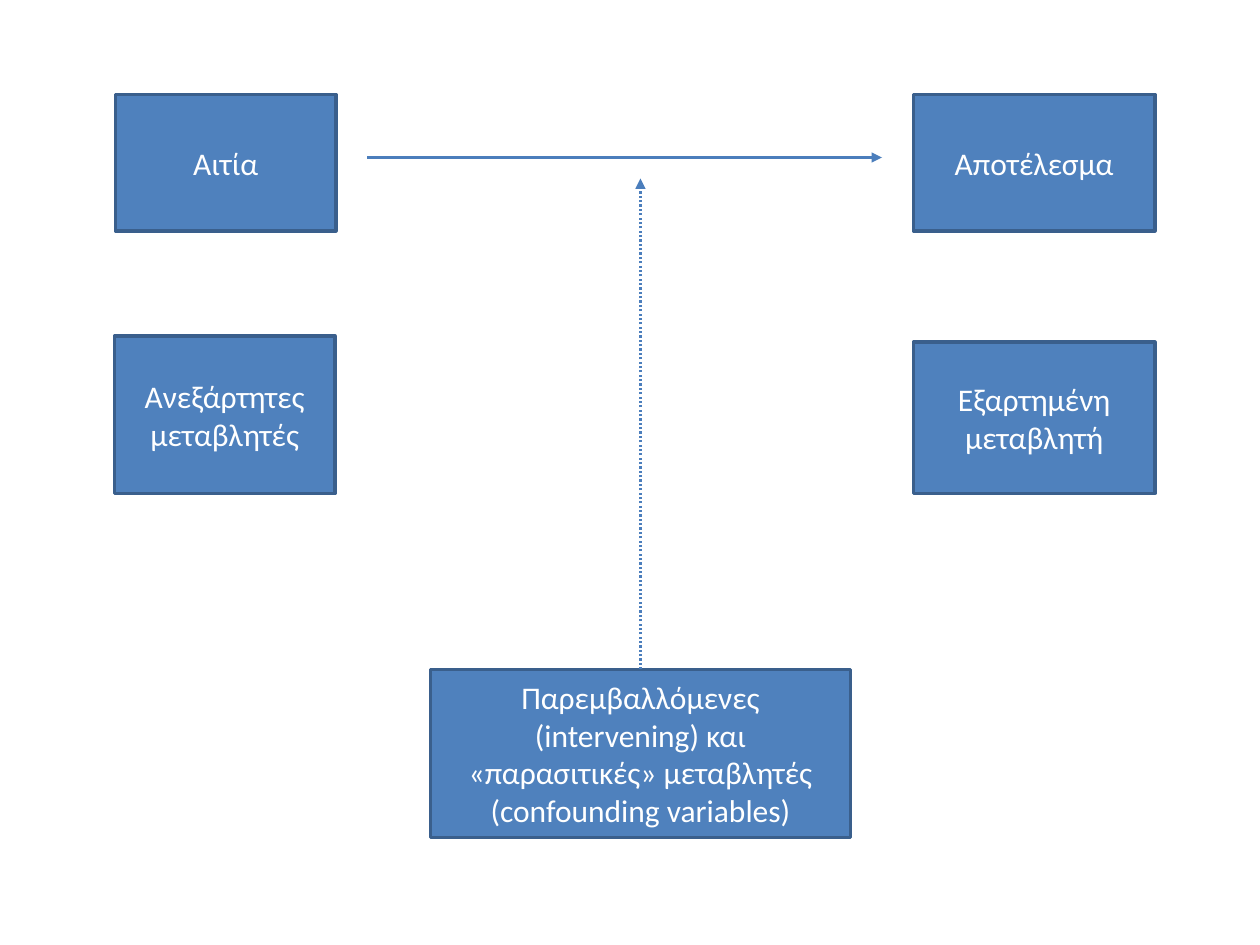
from lxml.etree import SubElement
from pptx import Presentation
from pptx.dml.color import RGBColor
from pptx.enum.dml import MSO_LINE
from pptx.enum.shapes import MSO_CONNECTOR as CONN, MSO_SHAPE as SHAPE
from pptx.enum.text import MSO_ANCHOR as ANCHOR, PP_ALIGN as ALIGN
from pptx.oxml.ns import qn
from pptx.util import Inches, Pt

BLUE = RGBColor(0x4F, 0x81, 0xBD)
BORDER = RGBColor(0x3A, 0x5F, 0x8C)
ARROW = RGBColor(0x4B, 0x7E, 0xBC)
WHITE = RGBColor(0xFF, 0xFF, 0xFF)
UNIT = Inches(1) / 12
COLS, ROWS = 120, 90


def grid(*cells):
    return [round(c * UNIT) for c in cells]


def add_box(s, text, col, row, cols, rows):
    sp = s.shapes.add_shape(SHAPE.RECTANGLE, *grid(col, row, cols, rows))
    sp.shadow.inherit = False
    sp.fill.solid()
    sp.fill.fore_color.rgb = BLUE
    sp.line.color.rgb = BORDER
    sp.line.width = Pt(2)
    tf = sp.text_frame
    tf.word_wrap = True
    tf.vertical_anchor = ANCHOR.MIDDLE
    p = tf.paragraphs[0]
    p.alignment = ALIGN.CENTER
    r = p.add_run()
    r.text = text
    r.font.name = "Calibri"
    r.font.size = Pt(18)
    r.font.color.rgb = WHITE
    return sp


def add_arrow(s, start, end, width, dash=None):
    cn = s.shapes.add_connector(CONN.STRAIGHT, *grid(*start, *end))
    cn.line.color.rgb = ARROW
    cn.line.width = Pt(width)
    if dash:
        cn.line.dash_style = dash
    sp_pr = cn._element.spPr
    SubElement(sp_pr.find(qn("a:ln")), qn("a:tailEnd"), type="triangle")
    SubElement(sp_pr, qn("a:effectLst"))
    return cn


def add_concept(s, name, variable, col, row, cols, rows, variable_shift, variable_rows):
    name_rows = 13
    add_box(s, name, col, row, cols, name_rows)
    add_box(s, variable, col + variable_shift, row + rows - variable_rows,
            cols, variable_rows)


def add_confounders(s, text, col, row, cols, rows, target_row):
    box = add_box(s, text, col, row, cols, rows)
    middle = col + cols / 2
    arrow = add_arrow(s, (middle, row), (middle, target_row), 1.25,
                      MSO_LINE.ROUND_DOT)
    arrow.begin_connect(box, 0)


def main():
    prs = Presentation()
    prs.slide_width, prs.slide_height = grid(COLS, ROWS)
    s = prs.slides.add_slide(prs.slide_layouts[6])
    add_concept(s, "Αιτία", "Ανεξάρτητες μεταβλητές", 11, 9, 21, 38, -0.1, 15)
    add_concept(s, "Αποτέλεσμα", "Εξαρτημένη μεταβλητή", 87, 9, 23, 38, 0, 14.4)
    add_arrow(s, (35, 15), (84, 15), 1.75)
    add_confounders(
        s,
        "Παρεμβαλλόμενες (intervening) και «παρασιτικές» μεταβλητές "
        "(confounding variables)",
        41, 63.75, 40, 16, 17)
    prs.save("out.pptx")


if __name__ == "__main__":
    main()
